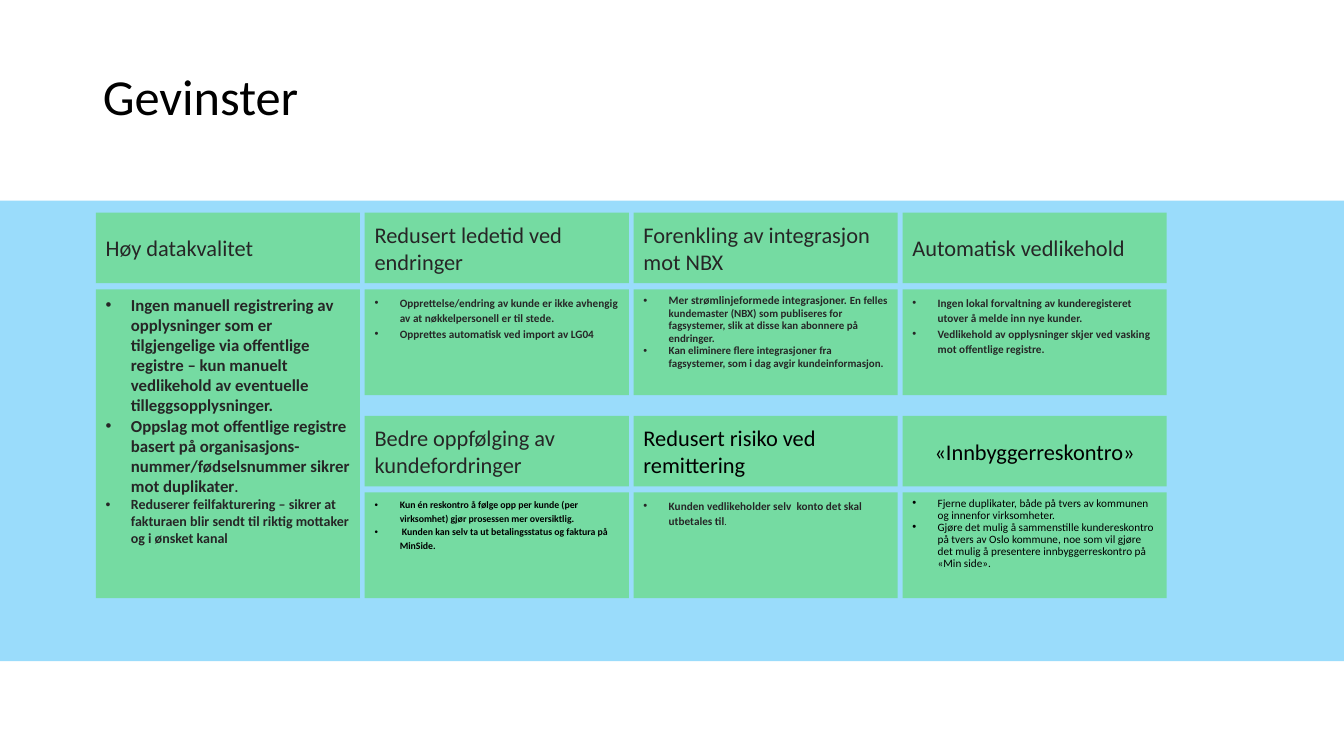
from lxml.etree import SubElement
from pptx import Presentation
from pptx.dml.color import RGBColor
from pptx.enum.shapes import MSO_SHAPE
from pptx.enum.text import MSO_ANCHOR, PP_ALIGN
from pptx.oxml.ns import qn
from pptx.util import Inches, Pt

BLACK = RGBColor(0x00, 0x00, 0x00)
DARK = RGBColor(0x26, 0x26, 0x26)
GREEN = RGBColor(0x75, 0xDB, 0xA2)
SKY = RGBColor(0x9A, 0xDC, 0xFB)
LEFT, CENTER = PP_ALIGN.LEFT, PP_ALIGN.CENTER

TITLE = "Gevinster"
# column, row, rows spanned, (heading, colour, alignment), (colour, line spacing), bullets as runs (text, size, bold)
BENEFITS = [
    (0, 0, 2, ("Høy datakvalitet", DARK, LEFT), (DARK, 1.0), [
        [("Ingen manuell registrering av opplysninger som er tilgjengelige via offentlige registre – kun manuelt "
          "vedlikehold av eventuelle tilleggsopplysninger.", 12, True)],
        [("Oppslag mot offentlige registre basert på organisasjons-nummer/fødselsnummer sikrer mot duplikater",
          12, True), (".", 10, True)],
        [("Reduserer feilfakturering – sikrer at fakturaen blir sendt til riktig mottaker og i ønsket kanal",
          10, True)]]),
    (1, 0, 1, ("Redusert ledetid ved endringer", DARK, LEFT), (DARK, 1.15), [
        [("Opprettelse/endring av kunde er ikke avhengig av at nøkkelpersonell er til stede.", 8, True)],
        [("Opprettes automatisk ved import av LG04", 8, True)]]),
    (2, 0, 1, ("Forenkling av integrasjon mot NBX", DARK, LEFT), (DARK, 0.95), [
        [("Mer strømlinjeformede integrasjoner. ", 8.1, True),
         ("En felles kundemaster (NBX) som publiseres for fagsystemer, slik at disse kan abonnere på endringer.",
          7.8, True)],
        [("Kan eliminere flere integrasjoner fra fagsystemer, som i dag avgir kundeinformasjon.", 7.8, True)]]),
    (3, 0, 1, ("Automatisk vedlikehold", DARK, LEFT), (DARK, 1.15), [
        [("Ingen lokal forvaltning av kunderegisteret utover å melde inn nye kunder.", 8, True)],
        [("Vedlikehold av opplysninger skjer ved vasking mot offentlige registre.", 8, True)]]),
    (1, 1, 1, ("Bedre oppfølging av kundefordringer", DARK, LEFT), (BLACK, 1.15), [
        [("Kun én reskontro å følge opp per kunde (per virksomhet) gjør prosessen mer oversiktlig.", 7, True)],
        [(" Kunden kan selv ta ut betalingsstatus og faktura på MinSide.", 7, True)]]),
    (2, 1, 1, ("Redusert risiko ved remittering", BLACK, LEFT), (DARK, 1.15), [
        [("Kunden vedlikeholder selv  konto det skal utbetales til", 8, True), (".", 7, False)]]),
    (3, 1, 1, ("«Innbyggerreskontro»", BLACK, CENTER), (BLACK, 0.9), [
        [("Fjerne duplikater, både på tvers av kommunen og innenfor virksomheter.", 8, False)],
        [("Gjøre det mulig å sammenstille kundereskontro på tvers av Oslo kommune, noe som vil gjøre det mulig "
          "å presentere innbyggerreskontro på «Min side».", 8, False)]]),
]

GRID_LEFT, GRID_TOP = 0.95, 2.11
COLUMN_PITCH, ROW_PITCH = 2.667, 2.015
CARD_WIDTH, HEADING_HEIGHT = 2.62, 0.7
DETAIL_OFFSET, DETAIL_HEIGHT = 0.76, 1.05
INDENT = Inches(0.25)


def add_box(slide, left, top, width, height, colour):
    box = slide.shapes.add_shape(MSO_SHAPE.RECTANGLE, *map(Inches, (left, top, width, height)))
    box.shadow.inherit = False
    box.fill.solid()
    box.fill.fore_color.rgb = colour
    box.line.fill.background()
    return box


def add_run(paragraph, text, size, colour, bold=False):
    run = paragraph.add_run()
    run.text = text
    for attribute, value in {"name": "Calibri", "size": Pt(size), "bold": bold}.items():
        setattr(run.font, attribute, value)
    run.font.color.rgb = colour


def add_bullet(paragraph):
    properties = paragraph._p.get_or_add_pPr()
    properties.set("marL", str(INDENT))
    properties.set("indent", str(-INDENT))
    SubElement(properties, qn("a:buFont"), typeface="Arial")
    SubElement(properties, qn("a:buChar"), char="•")


def add_heading(slide, left, top, text, colour, alignment):
    frame = add_box(slide, left, top, CARD_WIDTH, HEADING_HEIGHT, GREEN).text_frame
    frame.vertical_anchor = MSO_ANCHOR.MIDDLE
    heading = frame.paragraphs[0]
    heading.alignment = alignment
    heading.space_before = Pt(6)
    add_run(heading, text, 16, colour)


def add_details(slide, left, top, height, colour, spacing, bullets):
    frame = add_box(slide, left, top, CARD_WIDTH, height, GREEN).text_frame
    frame.vertical_anchor = MSO_ANCHOR.TOP
    for index, runs in enumerate(bullets):
        bullet = frame.add_paragraph() if index else frame.paragraphs[0]
        bullet.alignment = LEFT
        bullet.line_spacing = spacing
        add_bullet(bullet)
        for text, size, bold in runs:
            add_run(bullet, text, size, colour, bold)


def add_title(slide):
    title = slide.shapes.title
    place = {"left": 0.92, "top": 0.4, "width": 10.71, "height": 1.45}
    for attribute, value in place.items():
        setattr(title, attribute, Inches(value))
    frame = title.text_frame
    frame.vertical_anchor = MSO_ANCHOR.BOTTOM
    frame.margin_bottom = Inches(0.6)
    heading = frame.paragraphs[0]
    heading.alignment = LEFT
    heading.line_spacing = 0.9
    add_run(heading, TITLE, 36, BLACK)


def main():
    presentation = Presentation()
    presentation.slide_width = Inches(13.33)
    presentation.slide_height = Inches(7.5)
    slide = presentation.slides.add_slide(presentation.slide_layouts[5])
    add_box(slide, 0, 1.99, 13.33, 4.57, SKY)
    add_title(slide)
    for column, row, span, heading, (colour, spacing), bullets in BENEFITS:
        left = GRID_LEFT + column * COLUMN_PITCH
        top = GRID_TOP + row * ROW_PITCH
        height = DETAIL_HEIGHT + (span - 1) * ROW_PITCH
        add_heading(slide, left, top, *heading)
        add_details(slide, left, top + DETAIL_OFFSET, height, colour, spacing, bullets)
    presentation.save("out.pptx")


if __name__ == "__main__":
    main()
